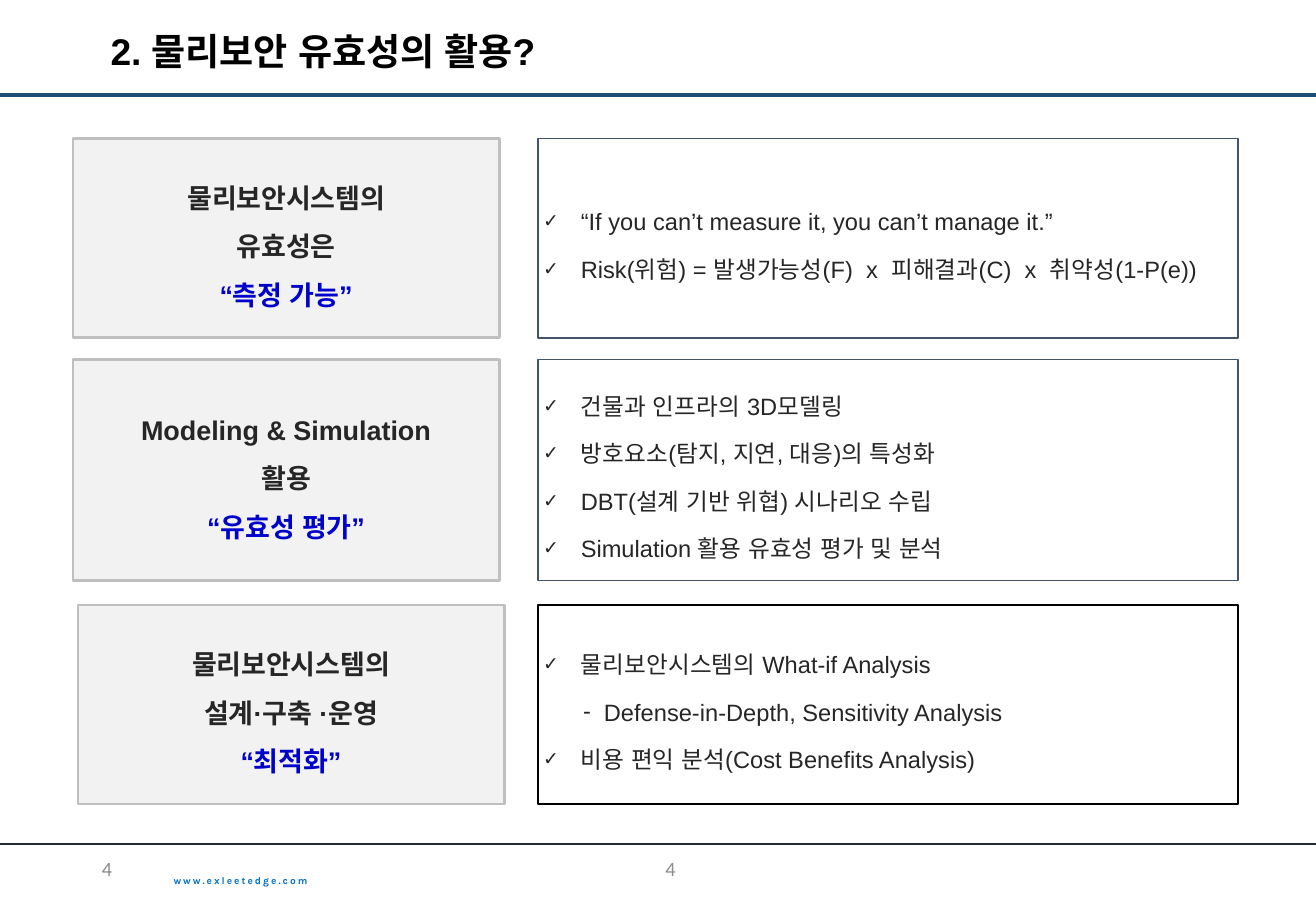
from dataclasses import dataclass

from lxml import etree
from pptx import Presentation
from pptx.dml.color import RGBColor
from pptx.enum.shapes import MSO_CONNECTOR, MSO_SHAPE
from pptx.enum.text import MSO_ANCHOR, MSO_AUTO_SIZE, PP_ALIGN
from pptx.oxml.ns import qn
from pptx.util import Inches, Pt

LEFT, CENTER, RIGHT = PP_ALIGN.LEFT, PP_ALIGN.CENTER, PP_ALIGN.RIGHT
TOP, MIDDLE = MSO_ANCHOR.TOP, MSO_ANCHOR.MIDDLE
NO_FIT = MSO_AUTO_SIZE.NONE
RECTANGLE, STRAIGHT = MSO_SHAPE.RECTANGLE, MSO_CONNECTOR.STRAIGHT
COMPARISON_LAYOUT = 4


@dataclass(frozen=True)
class Style:
    font: str
    size: float
    color: str
    bold: bool = False
    tracking: int = 0


@dataclass(frozen=True)
class Theme:
    title: Style = Style("Arial", 22, "000000", True)
    label: Style = Style("Arial", 16, "262626", True)
    keyword: Style = Style("Arial", 16, "0000CC", True)
    point: Style = Style("Arial", 14, "262626")
    number: Style = Style("Calibri", 12, "8C8C8C")
    address: Style = Style("Karla", 6, "0070C0", True, 120)
    label_fill: str = "F2F2F2"
    label_line: str = "BFBFBF"
    header_rule: str = "1F4E79"
    footer_rule: str = "222A35"
    line_spacing: float = 1.5


@dataclass(frozen=True)
class Bullet:
    char: str
    percent: int
    margin: float
    hanging: float


CHECK = Bullet("✓", 80, 0.31, 0.31)
DASH = Bullet("-", 100, 0.5, 0.17)


class SlideBuilder:
    """Places elements on one slide; lengths are percentages of its size."""

    def __init__(self, deck, theme):
        self.deck, self.theme = deck, theme
        self.slide = deck.slides.add_slide(deck.slide_layouts[COMPARISON_LAYOUT])

    def box(self, left, top, width, height):
        across, down = self.deck.slide_width / 100, self.deck.slide_height / 100
        return (int(left * across), int(top * down),
                int(width * across), int(height * down))

    def move(self, shape, area):
        shape.left, shape.top, shape.width, shape.height = self.box(*area)

    def frame(self, shape, inset_x, inset_y, anchor=MIDDLE):
        text = shape.text_frame
        text.word_wrap, text.auto_size = True, NO_FIT
        text.vertical_anchor = anchor
        text.margin_left = text.margin_right = Inches(inset_x)
        text.margin_top = text.margin_bottom = Inches(inset_y)
        return text

    def outline(self, shape, color, width):
        shape.line.color.rgb = RGBColor.from_string(color)
        shape.line.width = Pt(width)

    def paragraph(self, text, index, words, style, align=LEFT,
                  spacing=1.0, before=0, bullet=None):
        paragraph = text.add_paragraph() if index else text.paragraphs[0]
        if bullet:
            self.bullet(paragraph, bullet)
        paragraph.alignment, paragraph.line_spacing = align, spacing
        paragraph.space_before = Pt(before if index else 0)
        run = paragraph.add_run()
        run.text = words
        font = run.font
        font.name, font.size, font.bold = style.font, Pt(style.size), style.bold
        font.color.rgb = RGBColor.from_string(style.color)
        properties = run._r.get_or_add_rPr()
        etree.SubElement(properties, qn("a:ea"), typeface=style.font)
        if style.tracking:
            properties.set("spc", str(style.tracking))

    def bullet(self, paragraph, bullet):
        properties = paragraph._p.get_or_add_pPr()
        properties.set("marL", str(Inches(bullet.margin)))
        properties.set("indent", str(-Inches(bullet.hanging)))
        etree.SubElement(properties, qn("a:buSzPct"), val=str(bullet.percent * 1000))
        etree.SubElement(properties, qn("a:buFont"), typeface="Arial")
        etree.SubElement(properties, qn("a:buChar"), char=bullet.char)

    def title(self, words, area):
        heading = self.slide.shapes.title
        self.move(heading, area)
        self.paragraph(self.frame(heading, 0.1, 0.05), 0, words, self.theme.title)

    def rule(self, top, color, width):
        left, y, length, _ = self.box(0, top, 100, 0)
        rule = self.slide.shapes.add_connector(STRAIGHT, left, y, length, y)
        self.outline(rule, color, width)
        etree.SubElement(rule._element.spPr, qn("a:effectLst"))

    def label(self, lines, area):
        label = self.slide.shapes.add_shape(RECTANGLE, *self.box(*area))
        label.shadow.inherit = False
        label.fill.solid()
        label.fill.fore_color.rgb = RGBColor.from_string(self.theme.label_fill)
        self.outline(label, self.theme.label_line, 1.5)
        text = self.frame(label, 0, 0)
        for index, words in enumerate(lines):
            is_keyword = index == len(lines) - 1
            style = self.theme.keyword if is_keyword else self.theme.label
            self.paragraph(text, index, words, style, CENTER, self.theme.line_spacing)

    def points(self, slot, items, area, line_color):
        panel = self.slide.placeholders[slot]
        self.move(panel, area)
        panel.fill.background()
        self.outline(panel, line_color, 1)
        text = self.frame(panel, 0.04, 0.04)
        for index, (bullet, words) in enumerate(items):
            self.paragraph(text, index, words, self.theme.point,
                           spacing=self.theme.line_spacing, before=3, bullet=bullet)

    def note(self, words, area, style, align=LEFT, anchor=MIDDLE):
        note = self.slide.shapes.add_textbox(*self.box(*area))
        self.paragraph(self.frame(note, 0.1, 0.04, anchor), 0, words, style, align)

    def drop_empty_placeholders(self):
        for holder in list(self.slide.placeholders):
            if not holder.text_frame.text:
                holder._element.getparent().remove(holder._element)


# Each topic: top, height, label left, panel line, label lines, points
TOPICS = [
    (15.2, 21.87, 5.54, "44546A",
     ["물리보안시스템의", "유효성은", "“측정 가능”"],
     [(CHECK, "“If you can’t measure it, you can’t manage it.”"),
      (CHECK, "Risk(위험) = 발생가능성(F)  x  피해결과(C)  x  취약성(1-P(e))")]),
    (39.47, 24.27, 5.54, "44546A",
     ["Modeling & Simulation", "활용", "“유효성 평가”"],
     [(CHECK, "건물과 인프라의 3D모델링"),
      (CHECK, "방호요소(탐지, 지연, 대응)의 특성화"),
      (CHECK, "DBT(설계 기반 위협) 시나리오 수립"),
      (CHECK, "Simulation 활용 유효성 평가 및 분석")]),
    (66.4, 21.87, 5.91, "000000",
     ["물리보안시스템의", "설계·구축 ·운영", "“최적화”"],
     [(CHECK, "물리보안시스템의 What-if Analysis"),
      (DASH, "Defense-in-Depth, Sensitivity Analysis"),
      (CHECK, "비용 편익 분석(Cost Benefits Analysis)")]),
]
LABEL_WIDTH, PANEL_LEFT, PANEL_WIDTH = 32.41, 40.9, 53.19
FOOTER_TOP, FOOTER_HEIGHT = 92.67, 5.33


def main():
    deck = Presentation()
    deck.slide_width, deck.slide_height = Inches(10.83), Inches(7.5)
    theme = Theme()
    page = SlideBuilder(deck, theme)

    # Header
    page.title("2. 물리보안 유효성의 활용?", (7.48, 1.87, 86.89, 7.47))
    page.rule(10.4, theme.header_rule, 2.25)

    # Topics with their points
    for slot, (top, height, left, line, heading, items) in enumerate(TOPICS, 1):
        page.label(heading, (left, top, LABEL_WIDTH, height))
        page.points(slot, items, (PANEL_LEFT, top, PANEL_WIDTH, height), line)
    page.drop_empty_placeholders()

    # Footer
    page.rule(FOOTER_TOP, theme.footer_rule, 1)
    page.note("www.exleetedge.com", (12.28, 95.47, 12.65, 2.93), theme.address, anchor=TOP)
    for left, width, align in [(6.83, 22.53, LEFT), (48.75, 3.51, RIGHT)]:
        page.note("4", (left, FOOTER_TOP, width, FOOTER_HEIGHT), theme.number, align)

    deck.save("out.pptx")


if __name__ == "__main__":
    main()
